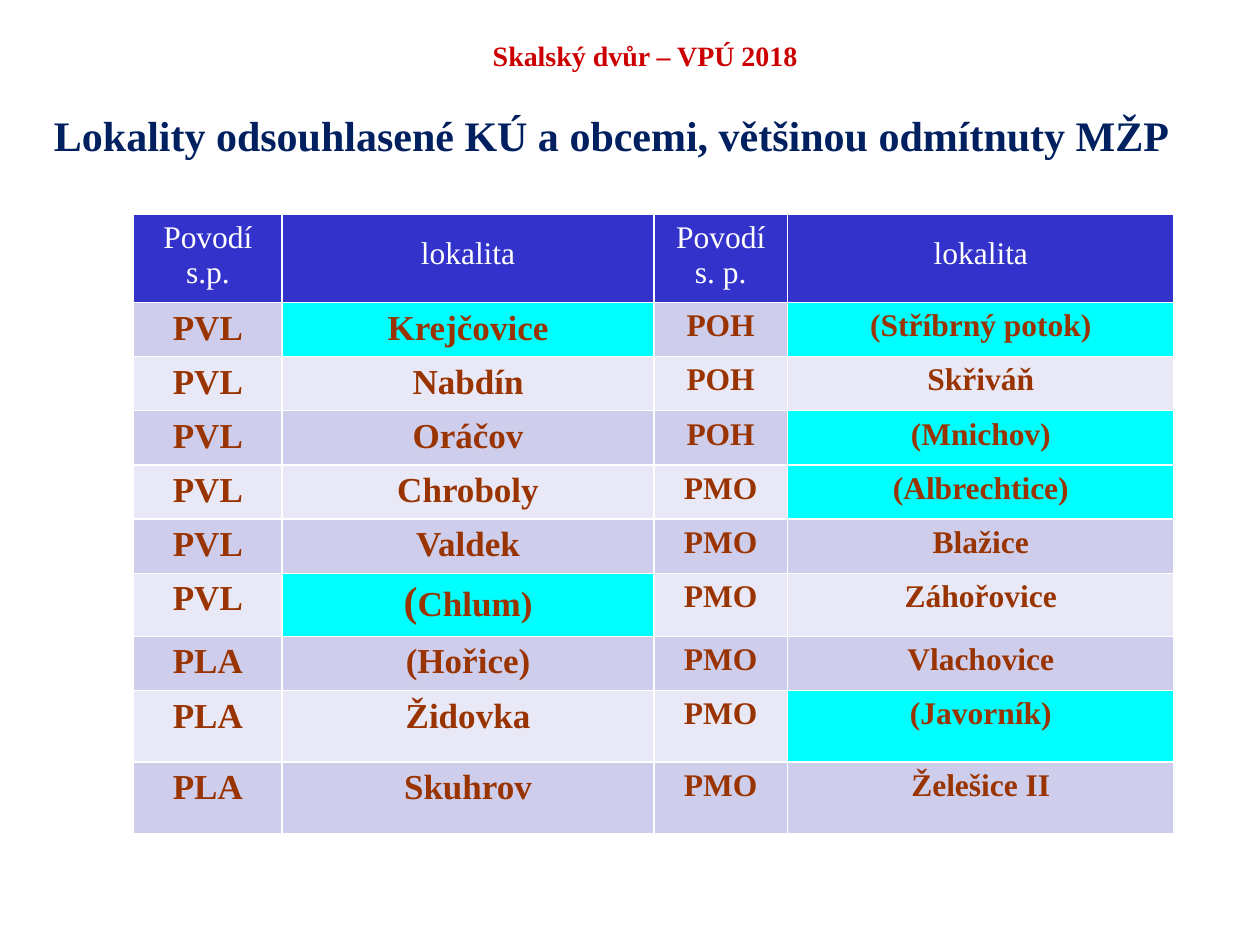
from lxml import etree
from pptx import Presentation
from pptx.dml.color import RGBColor
from pptx.enum.text import MSO_ANCHOR, MSO_AUTO_SIZE, PP_ALIGN
from pptx.oxml.ns import qn
from pptx.util import Inches, Pt

CENTER, TOP, NO_FIT = PP_ALIGN.CENTER, MSO_ANCHOR.TOP, MSO_AUTO_SIZE.NONE
FONT = "Times New Roman"
COLORS = {
    "title": "002060", "event": "CC0000", "header": "3333CC",
    "white": "FFFFFF", "text": "993300", "odd": "CECEEC",
    "even": "E8E8F6", "highlight": "00FFFF",
}

EVENT = "Skalský dvůr – VPÚ 2018"
TITLE = "Lokality odsouhlasené KÚ a obcemi, většinou odmítnuty MŽP"
HEADER = ["Povodí s.p.", "lokalita", "Povodí s. p.", "lokalita"]
ROWS = [
    ["PVL", "Krejčovice", "POH", "(Stříbrný potok)"],
    ["PVL", "Nabdín", "POH", "Skřiváň"],
    ["PVL", "Oráčov", "POH", "(Mnichov)"],
    ["PVL", "Chroboly", "PMO", "(Albrechtice)"],
    ["PVL", "Valdek", "PMO", "Blažice"],
    ["PVL", "(Chlum)", "PMO", "Záhořovice"],
    ["PLA", "(Hořice)", "PMO", "Vlachovice"],
    ["PLA", "Židovka", "PMO", "(Javorník)"],
    ["PLA", "Skuhrov", "PMO", "Želešice II"],
]
HIGHLIGHTED = {"Krejčovice", "(Stříbrný potok)", "(Mnichov)",
               "(Albrechtice)", "(Chlum)", "(Javorník)"}
COL_WIDTHS = [1.18, 2.95, 1.06, 3.07]
ROW_HEIGHTS = [0.7] + [0.43] * 5 + [0.5, 0.43, 0.57, 0.57]
COL_SIZES = [20, 20, 18, 18]


def rgb(name):
    return RGBColor.from_string(COLORS[name])


def write(tf, text, size, color, bold=True, first_size=None):
    """Write one centred paragraph; first_size enlarges its first letter."""
    p = tf.paragraphs[0]
    p.alignment = CENTER
    parts = [(text[0], first_size), (text[1:], size)] if first_size else [(text, size)]
    for part, part_size in parts:
        r = p.add_run()
        r.text = part
        r.font.name, r.font.size, r.font.bold = FONT, Pt(part_size), bold
        r.font.color.rgb = rgb(color)


def place_text(sp, box, text, **style):
    sp.left, sp.top, sp.width, sp.height = map(Inches, box)
    tf = sp.text_frame
    tf.word_wrap, tf.auto_size, tf.vertical_anchor = True, NO_FIT, TOP
    write(tf, text, **style)


def add_borders(cell):
    tc_pr = cell._tc.get_or_add_tcPr()
    for side in ("lnL", "lnR", "lnT", "lnB"):
        ln = etree.SubElement(tc_pr, qn(f"a:{side}"), w=str(Pt(1)))
        fill = etree.SubElement(ln, qn("a:solidFill"))
        etree.SubElement(fill, qn("a:srgbClr"), val=COLORS["white"])


def format_cell(cell, fill):
    add_borders(cell)
    cell.fill.solid()
    cell.fill.fore_color.rgb = rgb(fill)


def add_sites_table(s):
    table = s.shapes.add_table(
        len(ROWS) + 1, len(HEADER), Inches(1.06), Inches(1.7),
        Inches(sum(COL_WIDTHS)), Inches(sum(ROW_HEIGHTS))).table
    for column, width in zip(table.columns, COL_WIDTHS):
        column.width = Inches(width)
    for row, height in zip(table.rows, ROW_HEIGHTS):
        row.height = Inches(height)

    for c, text in enumerate(HEADER):
        cell = table.cell(0, c)
        format_cell(cell, "header")
        if text == "lokalita":
            cell.margin_top = Inches(0.18)
        write(cell.text_frame, text, size=18, color="white", bold=False)

    for r, row in enumerate(ROWS, start=1):
        band = "odd" if r % 2 else "even"
        for c, text in enumerate(row):
            cell = table.cell(r, c)
            format_cell(cell, "highlight" if text in HIGHLIGHTED else band)
            write(cell.text_frame, text, size=COL_SIZES[c], color="text",
                  first_size=24 if text == "(Chlum)" else None)


def main():
    prs = Presentation()
    prs.slide_width, prs.slide_height = Inches(10), Inches(7.5)
    s = prs.slides.add_slide(prs.slide_layouts[5])
    add_sites_table(s)
    place_text(s.shapes.title, (0.21, 0.82, 9.29, 0.51), TITLE,
               size=24, color="title")
    place_text(s.shapes.add_textbox(0, 0, 0, 0), (2.48, 0.26, 5.28, 0.64), EVENT,
               size=16, color="event")
    prs.save("out.pptx")


if __name__ == "__main__":
    main()
